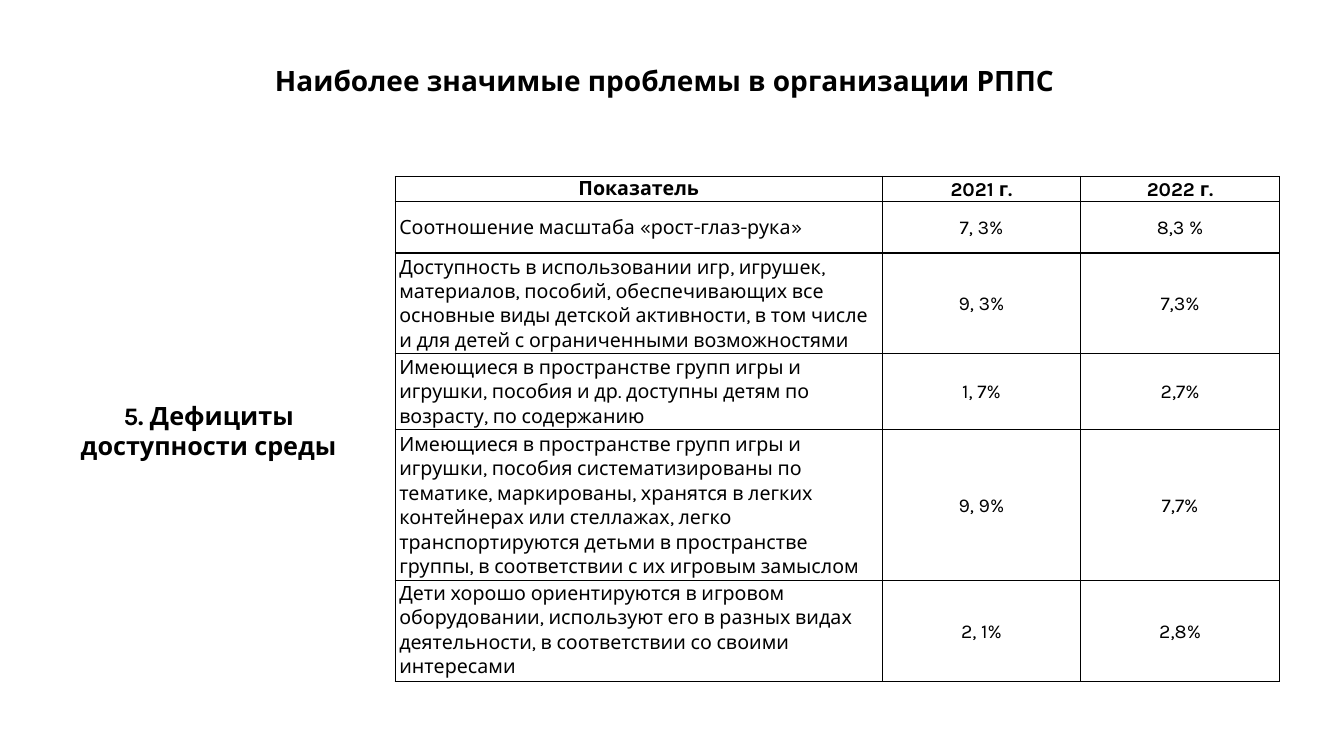
"""Build a slide with a table of accessibility deficits."""
from lxml import etree
from pptx import Presentation
from pptx.dml.color import RGBColor
from pptx.enum.text import MSO_ANCHOR, MSO_AUTO_SIZE, PP_ALIGN
from pptx.oxml.ns import qn
from pptx.util import Inches, Pt

LEFT, CENTER = PP_ALIGN.LEFT, PP_ALIGN.CENTER
TOP, MIDDLE = MSO_ANCHOR.TOP, MSO_ANCHOR.MIDDLE
GROW = MSO_AUTO_SIZE.SHAPE_TO_FIT_TEXT
FONT, BLACK = "Karla", "000000"

TITLE = ["Наиболее значимые проблемы в организации РППС"]
SECTION = ["5. Дефициты", "доступности среды"]
ROWS = [
    ("Показатель", "2021 г.", "2022 г."),
    ("Соотношение масштаба «рост-глаз-рука»", "7, 3%", "8,3 %"),
    ("Доступность в использовании игр, игрушек, материалов, пособий, "
     "обеспечивающих все основные виды детской активности, в том числе "
     "и для детей с ограниченными возможностями", "9, 3%", "7,3%"),
    ("Имеющиеся в пространстве групп игры и игрушки, пособия и др. "
     "доступны детям по возрасту, по содержанию", "1, 7%", "2,7%"),
    ("Имеющиеся в пространстве групп игры и игрушки, пособия "
     "систематизированы по тематике, маркированы, хранятся в легких "
     "контейнерах или стеллажах, легко транспортируются детьми в "
     "пространстве группы, в соответствии с их игровым замыслом",
     "9, 9%", "7,7%"),
    ("Дети хорошо ориентируются в игровом оборудовании, используют его "
     "в разных видах деятельности, в соответствии со своими интересами",
     "2, 1%", "2,8%"),
]
COLUMN_WIDTHS = [4.83, 1.97, 1.97]
ROW_HEIGHTS = [0.25, 0.51, 1, 0.75, 1.5, 1]
TABLE_LEFT, TABLE_TOP = 3.92, 1.75


def color(value):
    return RGBColor.from_string(value)


def write(frame, lines, size=14, bold=False, align=CENTER, spacing=None):
    for index, line in enumerate(lines):
        paragraph = frame.add_paragraph() if index else frame.paragraphs[0]
        paragraph.alignment = align
        paragraph.line_spacing = spacing
        run = paragraph.add_run()
        run.text = line
        run.font.name = FONT
        run.font.size = Pt(size)
        run.font.bold = bold
        run.font.color.rgb = color(BLACK)


def add_text(slide, lines, box, wrap=True, **text_format):
    shape = slide.shapes.add_textbox(*map(Inches, box))
    shape.text_frame.word_wrap = wrap
    shape.text_frame.auto_size = GROW
    write(shape.text_frame, lines, **text_format)


def add_borders(cell):
    properties = cell._tc.get_or_add_tcPr()
    for position, side in enumerate(("lnL", "lnR", "lnT", "lnB")):
        line = etree.Element(qn(f"a:{side}"), w=str(Pt(1)))
        fill = etree.SubElement(line, qn("a:solidFill"))
        etree.SubElement(fill, qn("a:srgbClr"), val=BLACK)
        properties.insert(position, line)


def add_indicator_table(slide):
    shape = slide.shapes.add_table(
        len(ROWS), len(COLUMN_WIDTHS), Inches(TABLE_LEFT), Inches(TABLE_TOP),
        Inches(sum(COLUMN_WIDTHS)), Inches(sum(ROW_HEIGHTS)))
    table = shape.table
    table.first_row = table.horz_banding = False
    for column, width in zip(table.columns, COLUMN_WIDTHS):
        column.width = Inches(width)
    for row, height in zip(table.rows, ROW_HEIGHTS):
        row.height = Inches(height)
    for row_index, values in enumerate(ROWS):
        header = row_index == 0
        for column_index, value in enumerate(values):
            cell = table.cell(row_index, column_index)
            label = column_index == 0
            at_top = label and row_index in (0, len(ROWS) - 1)
            cell.margin_left = cell.margin_right = Inches(0.07 if header else 0.04)
            cell.margin_top = cell.margin_bottom = 0
            cell.vertical_anchor = TOP if at_top else MIDDLE
            cell.fill.background()
            add_borders(cell)
            write(cell.text_frame, [value], bold=header, spacing=1.07,
                  align=LEFT if label and not header else CENTER)


def main():
    presentation = Presentation()
    presentation.slide_width = Inches(13.33)
    presentation.slide_height = Inches(7.5)
    slide = presentation.slides.add_slide(presentation.slide_layouts[6])
    add_text(slide, TITLE, (1.42, 0.58, 10.34, 0.44), size=20, bold=True)
    add_indicator_table(slide)
    add_text(slide, SECTION, (0.7, 3.92, 2.74, 0.71), wrap=False, size=18, bold=True)
    presentation.save("out.pptx")


if __name__ == "__main__":
    main()
